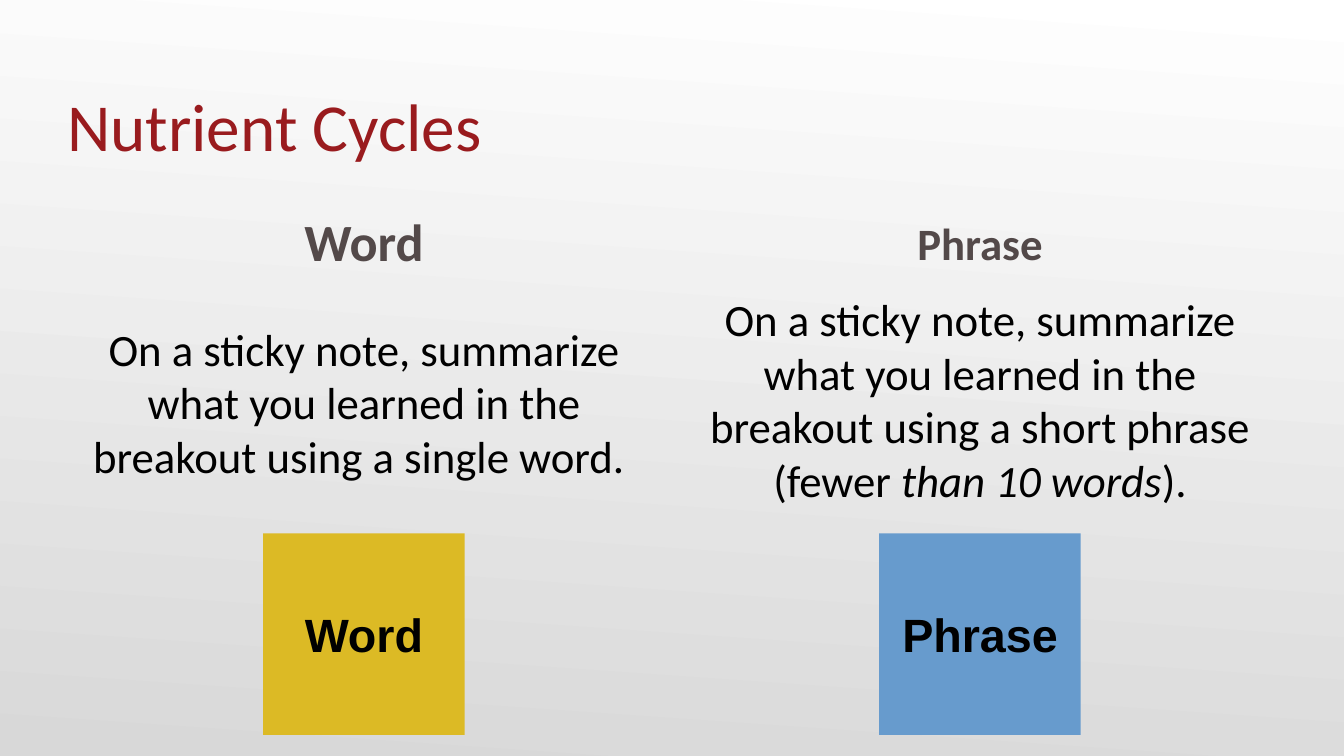
import pptx
import pptx.util
import pptx.dml.color
import pptx.enum.shapes
import pptx.enum.text

Pt = pptx.util.Pt
ALIGN = pptx.enum.text.PP_ALIGN
ANCHOR = pptx.enum.text.MSO_ANCHOR

COLORS = {
    "top": "FFFFFF", "bottom": "D8D8D8", "title": "991B1E", "heading": "534949",
    "text": "000000", "yellow": "DCBA25", "blue": "679BCD",
}
TITLE = "Nutrient Cycles"
COLUMNS = [
    {"name": "Word", "size": 28, "note": "yellow", "head_top": 109.4, "body_height": 137.5,
     "body": [("On a sticky note, summarize what you learned in the breakout "
               "using a single word. ", False)]},
    {"name": "Phrase", "size": 24, "note": "blue", "head_top": 110.2, "body_height": 134.6,
     "body": [("On a sticky note, summarize what you learned in the breakout "
               "using a short phrase (fewer", False),
              (" than 10 words", True), (").", False)]},
]
MARGIN, COLUMN_WIDTH, COLUMN_STEP = 36, 318, 330
BODY_TOP, NOTE_TOP, NOTE_SIZE = 148.3, 285.8, 108


def rgb(name):
    return pptx.dml.color.RGBColor.from_string(COLORS[name])


def write(s, runs, size, color, insets, font="Calibri", bold=False,
          align=ALIGN.CENTER, anchor=ANCHOR.MIDDLE):
    tf = s.text_frame
    tf.word_wrap = True
    tf.vertical_anchor = anchor
    tf.margin_left, tf.margin_top, tf.margin_right, tf.margin_bottom = map(Pt, insets)
    p = tf.paragraphs[0]
    p.alignment = align
    for text, italic in runs:
        r = p.add_run()
        r.text = text
        r.font.name = font
        r.font.size = Pt(size)
        r.font.bold = bold
        r.font.italic = italic
        r.font.color.rgb = rgb(color)


def add_text(left, top, width, height):
    return slide.shapes.add_textbox(Pt(left), Pt(top), Pt(width), Pt(height))


prs = pptx.Presentation()
prs.slide_width, prs.slide_height = Pt(720), Pt(405)
slide = prs.slides.add_slide(prs.slide_layouts[6])

fill = slide.background.fill
fill.gradient()
fill.gradient_angle = 266
for stop, name, position in zip(fill.gradient_stops, ("top", "bottom"), (0, 1)):
    stop.color.rgb = rgb(name)
    stop.position = position

write(add_text(MARGIN, 41.8, 648, 67.5), [(TITLE, False)], 36, "title",
      (0, 3.6, 0, 0), align=ALIGN.LEFT, anchor=ANCHOR.TOP)

for i, column in enumerate(COLUMNS):
    left = MARGIN + i * COLUMN_STEP
    label = [(column["name"], False)]
    write(add_text(left, column["head_top"], COLUMN_WIDTH, 39), label,
          column["size"], "heading", (3.6, 0, 3.6, 0), bold=True)
    write(add_text(left, BODY_TOP, COLUMN_WIDTH, column["body_height"]), column["body"],
          24, "text", (7.2, 0, 7.2, 3.6))
    note = slide.shapes.add_shape(
        pptx.enum.shapes.MSO_SHAPE.RECTANGLE,
        Pt(left + (COLUMN_WIDTH - NOTE_SIZE) / 2), Pt(NOTE_TOP), Pt(NOTE_SIZE), Pt(NOTE_SIZE))
    note.shadow.inherit = False
    note.fill.solid()
    note.fill.fore_color.rgb = rgb(column["note"])
    note.line.fill.background()
    write(note, label, 25, "text", (7.2, 7.2, 7.2, 7.2), font="Arial", bold=True)

prs.save("out.pptx")
